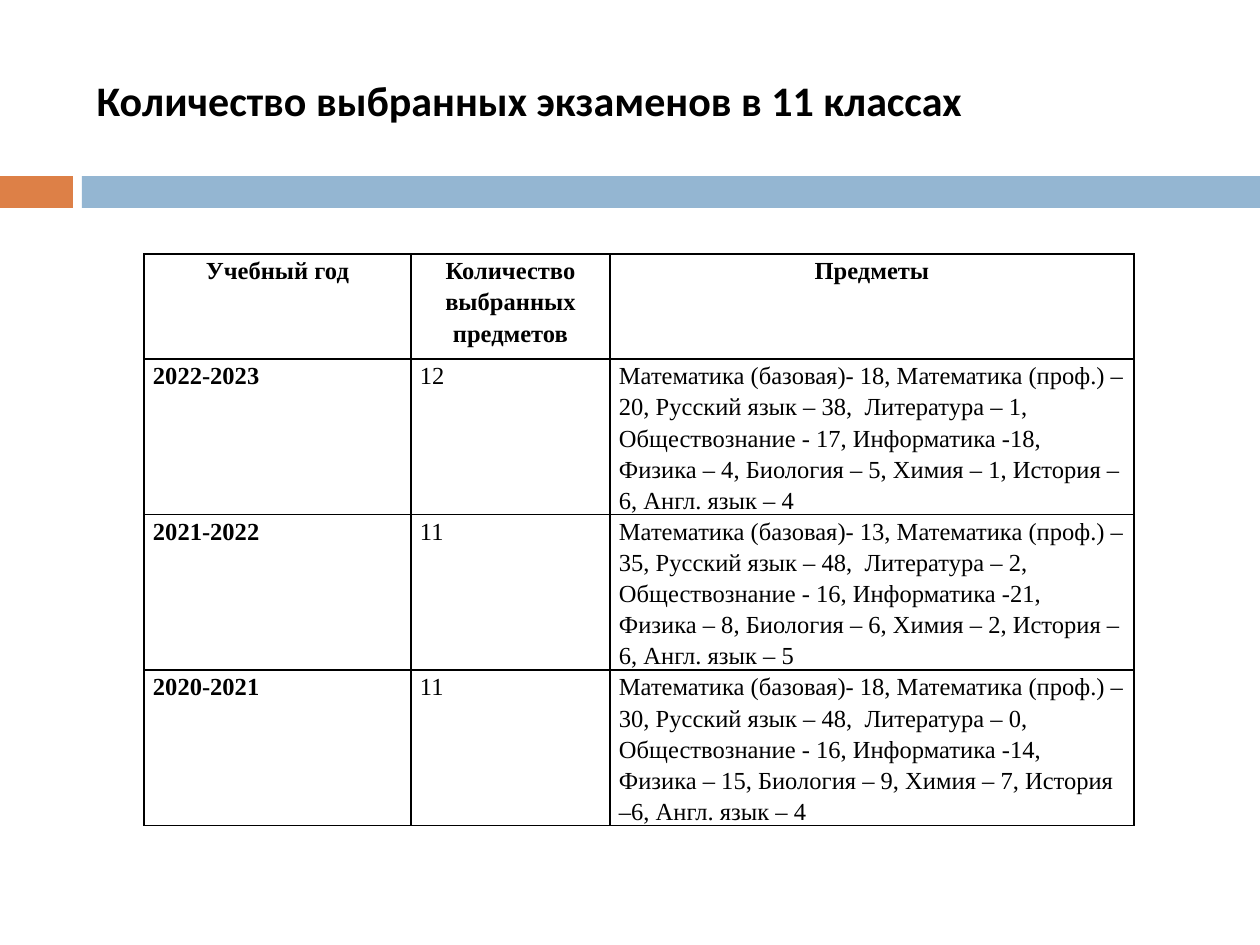
from dataclasses import dataclass

from lxml import etree
from pptx import Presentation
from pptx.dml.color import RGBColor
from pptx.enum import shapes, text
from pptx.oxml.ns import qn
from pptx.util import Emu, Pt

SCALE = 914400 / 126
BLACK = "000000"
COLUMNS = [267, 199, 524]
HEADER_HEIGHT, ROW_HEIGHT = 105, 155


@dataclass
class Bar:
    left: int
    width: int
    color: str


@dataclass
class YearRow:
    year: str
    count: str
    subjects: str


HEADERS = ["Учебный год", "Количество выбранных предметов", "Предметы"]
BARS = [Bar(0, 73, "DD8047"), Bar(82, 1178, "94B6D2")]
YEARS = [
    YearRow("2022-2023", "12",
            "Математика (базовая)- 18, Математика (проф.) – 20, Русский язык – 38,  "
            "Литература – 1, Обществознание - 17, Информатика -18, Физика – 4, "
            "Биология – 5, Химия – 1, История –6, Англ. язык – 4"),
    YearRow("2021-2022", "11",
            "Математика (базовая)- 13, Математика (проф.) – 35, Русский язык – 48,  "
            "Литература – 2, Обществознание - 16, Информатика -21, Физика – 8, "
            "Биология – 6, Химия – 2, История –6, Англ. язык – 5"),
    YearRow("2020-2021", "11",
            "Математика (базовая)- 18, Математика (проф.) –30, Русский язык – 48,  "
            "Литература – 0, Обществознание - 16, Информатика -14, Физика – 15, "
            "Биология – 9, Химия – 7, История –6, Англ. язык – 4"),
]


def px(n: int) -> Emu:
    return Emu(round(n * SCALE))


def rgb(color: str) -> RGBColor:
    return RGBColor.from_string(color)


def write(tf, words: str, *, size: int, font: str, bold: bool = False,
          align=text.PP_ALIGN.LEFT, spacing: float = 1.0) -> None:
    tf.word_wrap = True
    p = tf.paragraphs[0]
    p.alignment = align
    p.line_spacing = spacing
    r = p.add_run()
    r.text = words
    r.font.size = Pt(size)
    r.font.name = font
    r.font.bold = bold
    r.font.color.rgb = rgb(BLACK)


def draw_bar(s, bar: Bar) -> None:
    sp = s.shapes.add_shape(shapes.MSO_SHAPE.RECTANGLE,
                            px(bar.left), px(176), px(bar.width), px(32))
    sp.shadow.inherit = False
    sp.fill.solid()
    sp.fill.fore_color.rgb = rgb(bar.color)
    sp.line.fill.background()


def draw_borders(cell) -> None:
    props = cell._tc.get_or_add_tcPr()
    for i, side in enumerate(("lnL", "lnR", "lnT", "lnB")):
        ln = etree.Element(qn(f"a:{side}"), w=str(Pt(1)))
        fill = etree.SubElement(ln, qn("a:solidFill"))
        etree.SubElement(fill, qn("a:srgbClr"), val=BLACK)
        props.insert(i, ln)


def fill_cell(cell, words: str, *, bold: bool, align) -> None:
    cell.margin_left = cell.margin_right = px(9)
    cell.margin_top = cell.margin_bottom = 0
    cell.fill.background()
    draw_borders(cell)
    write(cell.text_frame, words, size=14, font="Times New Roman",
          bold=bold, align=align, spacing=1.15)


def draw_table(s, years: list[YearRow]) -> None:
    rows = [HEADERS] + [[y.year, y.count, y.subjects] for y in years]
    heights = [HEADER_HEIGHT] + [ROW_HEIGHT] * len(years)
    table = s.shapes.add_table(len(rows), len(COLUMNS), px(144), px(254),
                               px(sum(COLUMNS)), px(sum(heights))).table
    table.first_row = table.horz_banding = False
    for column, width in zip(table.columns, COLUMNS):
        column.width = px(width)
    for i, (row, height) in enumerate(zip(rows, heights)):
        table.rows[i].height = px(height)
        align = text.PP_ALIGN.LEFT if i else text.PP_ALIGN.CENTER
        for j, words in enumerate(row):
            fill_cell(table.cell(i, j), words, bold=i == 0 or j == 0, align=align)


def main() -> None:
    prs = Presentation()
    prs.slide_width, prs.slide_height = px(1260), px(945)
    s = prs.slides.add_slide(prs.slide_layouts[5])
    for bar in BARS:
        draw_bar(s, bar)
    title = s.shapes.title
    title.left, title.top, title.width, title.height = px(84), px(32), px(1124), px(136)
    title.text_frame.vertical_anchor = text.MSO_ANCHOR.MIDDLE
    write(title.text_frame, "Количество выбранных экзаменов в 11 классах",
          size=24, font="Calibri", bold=True)
    draw_table(s, YEARS)
    prs.save("out.pptx")


if __name__ == "__main__":
    main()
